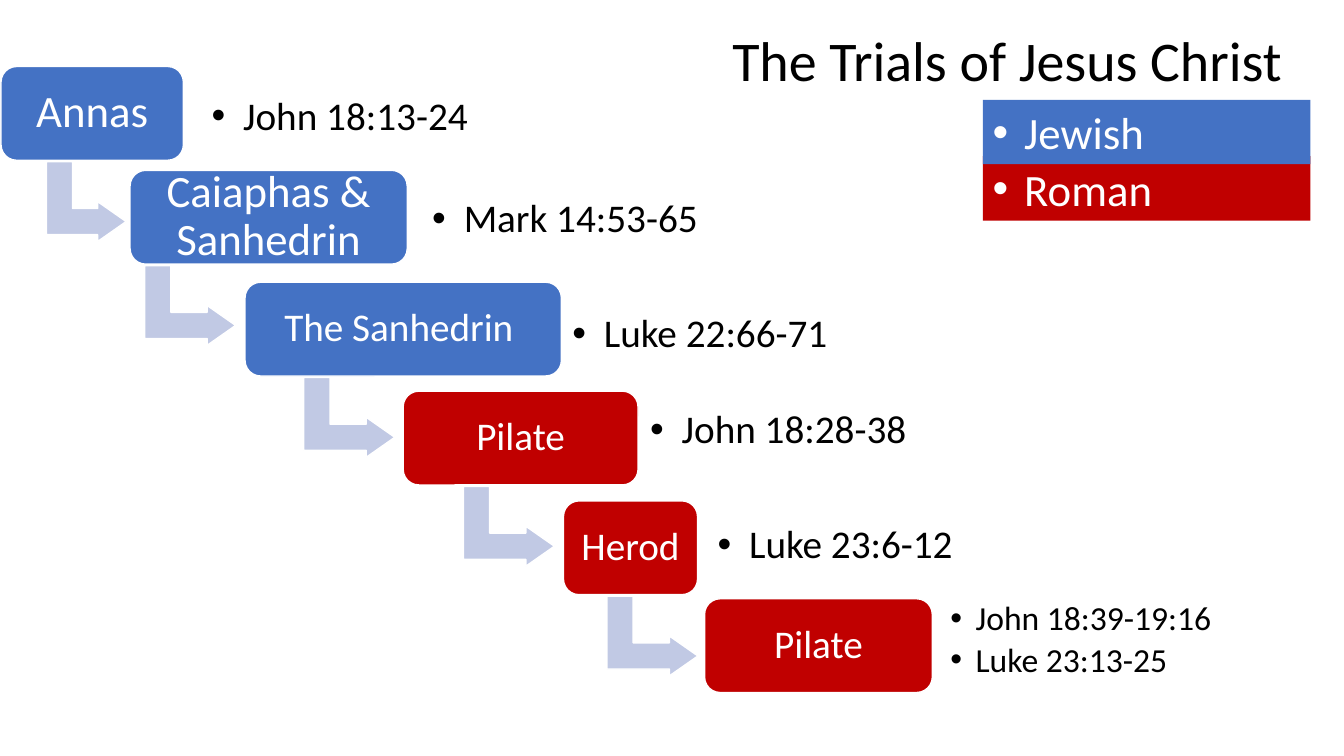
from dataclasses import dataclass

import pptx
import pptx.dml.color
import pptx.enum.shapes
import pptx.enum.text
import pptx.oxml
import pptx.oxml.ns
import pptx.util

Pt = pptx.util.Pt
SHAPE = pptx.enum.shapes.MSO_SHAPE
ALIGN = pptx.enum.text.PP_ALIGN
ANCHOR = pptx.enum.text.MSO_ANCHOR


@dataclass(frozen=True)
class Theme:
    font: str = "Calibri"
    jewish: str = "4472C4"
    roman: str = "C00000"
    arrow: str = "C1C9E4"
    white: str = "FFFFFF"
    black: str = "000000"
    title: int = 40
    large: int = 32
    body: int = 28
    small: int = 24


T = Theme()
BOX_H = 67
ARROW_H = 57

# name, colour, size, left, top, width
TRIALS = [
    ("Annas", T.jewish, T.large, 0.7, 47.5, 130.3),
    ("Caiaphas & Sanhedrin", T.jewish, T.large, 92.9, 121.7, 198),
    ("The Sanhedrin ", T.jewish, T.body, 175, 201.6, 226),
    ("Pilate", T.roman, T.body, 288, 279.4, 167.8),
    ("Herod", T.roman, T.body, 402.5, 357.8, 95.8),
    ("Pilate", T.roman, T.body, 503.3, 427.7, 162.7),
]
# verses, size, left, top, width, height, inset
VERSES = [
    (["John 18:13-24"], T.body, 142.6, 56.9, 280, 54, 8.6),
    (["Mark 14:53-65"], T.body, 300.2, 130.3, 241, 54, 8.6),
    (["Luke 22:66-71"], T.body, 400.3, 212.4, 203, 54, 8.6),
    (["John 18:28-38"], T.body, 455.8, 280.8, 237, 54, 8.6),
    (["Luke 23:6-12"], T.body, 501.8, 362.9, 216, 54, 10.8),
    (["John 18:39-19:16", "Luke 23:13-25"], T.small, 671.8, 422.6, 207.4, 70, 7.2),
]
# left, width
ARROWS = [(33.1, 57), (103.3, 65), (217, 65), (331, 65), (433.5, 65)]


def rgb(color):
    return pptx.dml.color.RGBColor.from_string(color)


def set_inset(tf, inset):
    tf.margin_left = tf.margin_right = tf.margin_top = tf.margin_bottom = Pt(inset)


def add_bullet(p, indent):
    pPr = p._p.get_or_add_pPr()
    pPr.set("marL", str(Pt(indent)))
    pPr.set("indent", str(-Pt(indent)))
    ns = pptx.oxml.ns.nsdecls("a")
    pPr.append(pptx.oxml.parse_xml(f'<a:buFont {ns} typeface="Arial"/>'))
    pPr.append(pptx.oxml.parse_xml(f'<a:buChar {ns} char="•"/>'))


def fill_text(tf, lines, size, color, align=ALIGN.LEFT, indent=0, tight=0):
    """Write lines; tight is the space after as a share of the size, with 90% leading."""
    tf.word_wrap = True
    tf.text = "\n".join(lines)
    for p in tf.paragraphs:
        p.alignment = align
        if tight:
            p.line_spacing = 0.9
            p.space_after = Pt(round(tight * size, 1))
        if indent:
            add_bullet(p, indent)
        for r in p.runs:
            r.font.name = T.font
            r.font.size = Pt(size)
            r.font.color.rgb = rgb(color)


def add_shape(s, kind, left, top, width, height, fill, outlined=True):
    sp = s.shapes.add_shape(kind, Pt(left), Pt(top), Pt(width), Pt(height))
    sp.shadow.inherit = False
    sp.fill.solid()
    sp.fill.fore_color.rgb = rgb(fill)
    if outlined:
        sp.line.color.rgb = rgb(T.white)
        sp.line.width = Pt(1)
    else:
        sp.line.fill.background()
    return sp


def add_text(s, left, top, width, height):
    return s.shapes.add_textbox(Pt(left), Pt(top), Pt(width), Pt(height)).text_frame


def add_arrow(s, left, top, width):
    """Add a down-then-right arrow; left, top and width are as seen after its turn."""
    shift = (width - ARROW_H) / 2
    sp = add_shape(s, SHAPE.BENT_UP_ARROW, left + shift, top - shift, ARROW_H, width, T.arrow)
    sp.rotation = 90
    for i, value in enumerate((0.328, 0.25, 0.358)):
        sp.adjustments[i] = value


def add_trial(s, name, color, size, left, top, width):
    sp = add_shape(s, SHAPE.ROUNDED_RECTANGLE, left, top, width, BOX_H, color)
    tf = sp.text_frame
    set_inset(tf, 9.6 if size == T.large else 8.6)
    tf.vertical_anchor = ANCHOR.MIDDLE
    fill_text(tf, [name], size, T.white, ALIGN.CENTER, tight=0.35)


def add_verses(s, verses, size, left, top, width, height, inset):
    tf = add_text(s, left, top, width, height)
    set_inset(tf, inset)
    tf.vertical_anchor = ANCHOR.MIDDLE
    fill_text(tf, verses, size, T.black, indent=18 if size == T.small else 22.5, tight=0.15)


def add_legend(s, name, color, top):
    sp = add_shape(s, SHAPE.RECTANGLE, 702, top, 234, 46, color, outlined=False)
    sp.text_frame.vertical_anchor = ANCHOR.TOP
    fill_text(sp.text_frame, [name], T.large, T.white, indent=22.5)


def main():
    prs = pptx.Presentation()
    prs.slide_width, prs.slide_height = Pt(960), Pt(540)
    s = prs.slides.add_slide(prs.slide_layouts[6])
    for (left, width), trial in zip(ARROWS, TRIALS):
        add_arrow(s, left, trial[4] + BOX_H + 1, width)
    for trial, verses in zip(TRIALS, VERSES):
        add_trial(s, *trial)
        add_verses(s, *verses)
    fill_text(add_text(s, 516, 15, 432, 56), ["The Trials of Jesus Christ"], T.title, T.black)
    add_legend(s, "Roman", T.roman, 111.6)
    add_legend(s, "Jewish", T.jewish, 71.3)
    prs.save("out.pptx")


if __name__ == "__main__":
    main()
